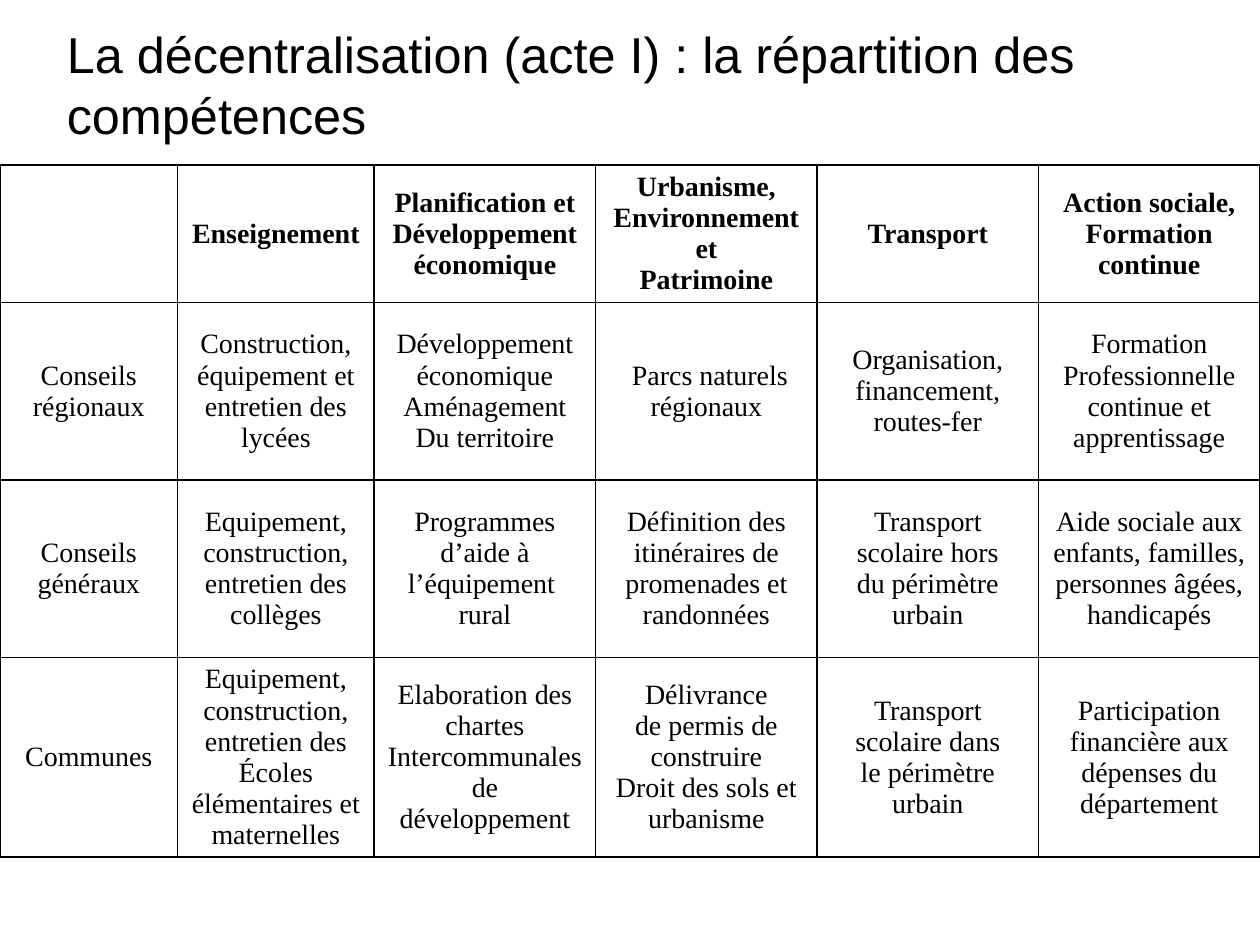
from lxml import etree
from pptx import Presentation, util as u
from pptx.dml.color import RGBColor
from pptx.enum import text
from pptx.oxml.ns import qn

# Content: one string per cell, lines separated by "|"
TITLE = "La décentralisation (acte I) : la répartition des compétences"
ROWS = [
    ["", "Enseignement", "Planification et|Développement|économique",
     "Urbanisme,|Environnement|et|Patrimoine", "Transport",
     "Action sociale,|Formation|continue"],
    ["Conseils|régionaux", "Construction,|équipement et|entretien des|lycées",
     "Développement|économique|Aménagement|Du territoire",
     " Parcs naturels|régionaux", "Organisation,|financement,|routes-fer",
     "Formation|Professionnelle|continue et|apprentissage"],
    ["Conseils|généraux", "Equipement,|construction,|entretien des|collèges",
     "Programmes|d’aide à|l’équipement |rural",
     "Définition des|itinéraires de|promenades et|randonnées",
     "Transport|scolaire hors|du périmètre|urbain",
     "Aide sociale aux|enfants, familles,|personnes âgées,|handicapés"],
    ["Communes",
     "Equipement,|construction,|entretien des|Écoles|élémentaires et|maternelles",
     "Elaboration des|chartes|Intercommunales|de|développement",
     "Délivrance|de permis de|construire|Droit des sols et|urbanisme",
     "Transport|scolaire dans|le périmètre|urbain",
     "Participation|financière aux|dépenses du|département"],
]
WIDTH, HEIGHT = 10, 7.5
TABLE_TOP = 1.31
ROW_HEIGHTS = [1.09, 1.41, 1.41, 1.58]
FIRST_COLS = [1.41, 1.56]
COL_WIDTHS = FIRST_COLS + [(WIDTH - sum(FIRST_COLS)) / 4] * 4
INK, PAPER = "000000", "FFFFFF"


def color(hex_value):
    return RGBColor.from_string(hex_value)


def add_run(p, words, font, size, bold=False):
    r = p.add_run()
    r.text = words
    r.font.name, r.font.size, r.font.bold = font, u.Pt(size), bold
    r.font.color.rgb = color(INK)


def set_borders(cell):
    tcPr = cell._tc.get_or_add_tcPr()
    for i, side in enumerate(("lnL", "lnR", "lnT", "lnB")):
        ln = etree.Element(qn(f"a:{side}"), w=str(u.Pt(1)))
        fill = etree.SubElement(ln, qn("a:solidFill"))
        etree.SubElement(fill, qn("a:srgbClr"), val=INK)
        tcPr.insert(i, ln)


def fill_cell(cell, content, bold):
    cell.fill.solid()
    cell.fill.fore_color.rgb = color(PAPER)
    set_borders(cell)
    cell.vertical_anchor = text.MSO_ANCHOR.MIDDLE
    if not content:
        return
    tf = cell.text_frame
    for i, line in enumerate(content.split("|")):
        p = tf.add_paragraph() if i else tf.paragraphs[0]
        p.alignment = text.PP_ALIGN.CENTER
        pPr = p._p.get_or_add_pPr()
        pPr.set("marL", str(u.Inches(0.38)))
        pPr.set("indent", str(u.Inches(-0.38)))
        add_run(p, line, "Times New Roman", 16, bold)


prs = Presentation()
prs.slide_width, prs.slide_height = u.Inches(WIDTH), u.Inches(HEIGHT)
s = prs.slides.add_slide(prs.slide_layouts[5])

# Title
title = s.shapes.title
title.left, title.top, title.width, title.height = map(
    u.Inches, (0.43, 0.13, 9.34, 1.07))
tf = title.text_frame
tf.word_wrap = True
tf.auto_size = text.MSO_AUTO_SIZE.NONE
tf.vertical_anchor = text.MSO_ANCHOR.MIDDLE
tf.paragraphs[0].alignment = text.PP_ALIGN.LEFT
add_run(tf.paragraphs[0], TITLE, "Arial", 28.8)

# Table of powers by level of government
table = s.shapes.add_table(
    len(ROWS), len(COL_WIDTHS), 0, u.Inches(TABLE_TOP),
    u.Inches(WIDTH), u.Inches(sum(ROW_HEIGHTS))).table
table.horz_banding = False
for col, width in zip(table.columns, COL_WIDTHS):
    col.width = u.Inches(width)
for i, (row, height) in enumerate(zip(table.rows, ROW_HEIGHTS)):
    row.height = u.Inches(height)
    for cell, content in zip(row.cells, ROWS[i]):
        fill_cell(cell, content, bold=i == 0)

prs.save("out.pptx")
